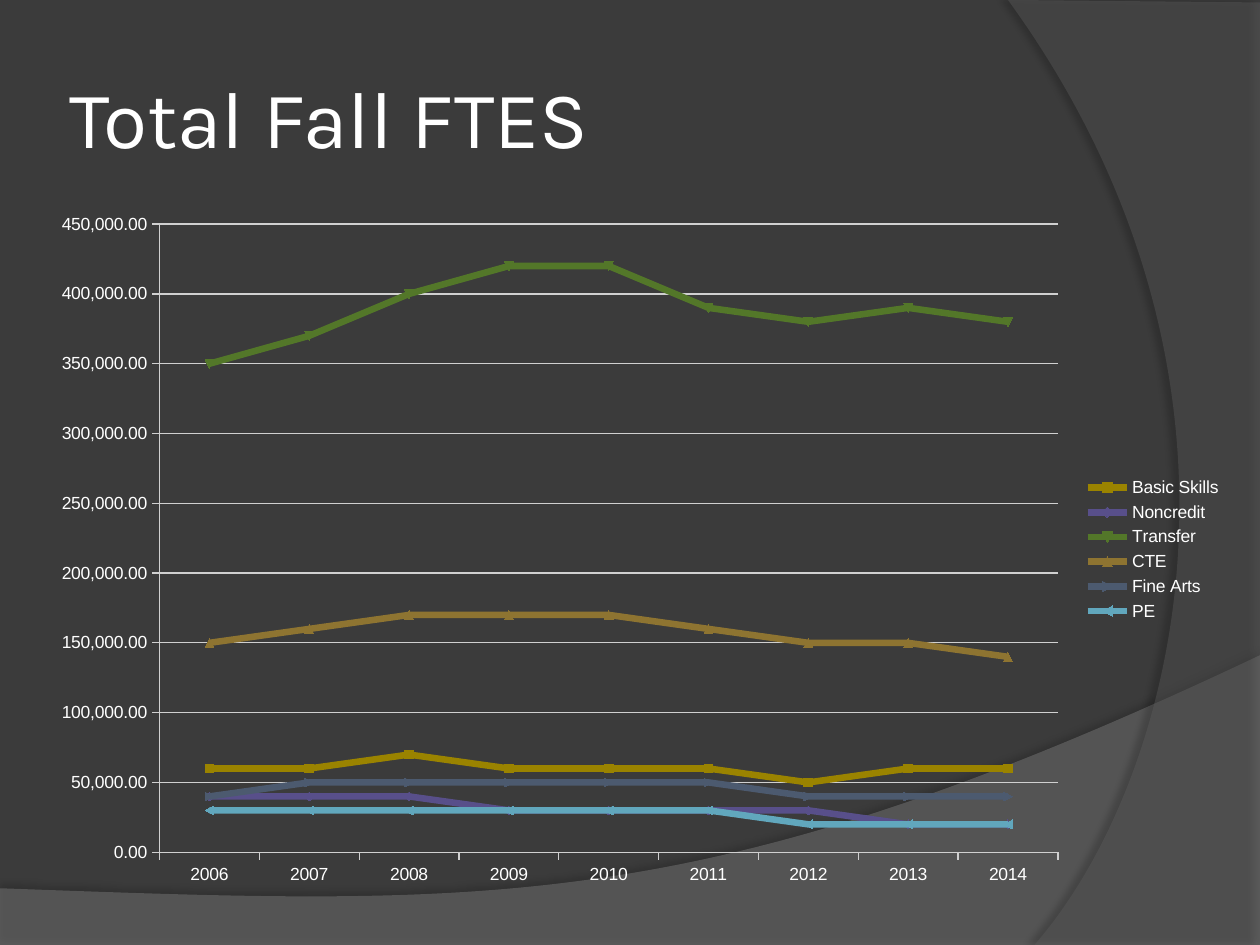
from dataclasses import dataclass
from lxml.etree import SubElement
from pptx import Presentation
from pptx.chart.data import CategoryChartData
from pptx.dml.color import RGBColor
from pptx.enum.chart import XL_CHART_TYPE, XL_LEGEND_POSITION, XL_TICK_MARK
from pptx.enum.text import MSO_ANCHOR
from pptx.oxml.ns import qn
from pptx.util import Emu, Inches, Pt

WIDE, HIGH = Inches(10), Inches(7.5)
UNIT = 100
Point = tuple[float, float]


@dataclass(frozen=True)
class Theme:
    back: str = "3B3B3B"
    text: str = "FFFFFF"
    grid: str = "D0D0D0"
    shade: str = "000000"
    head: str = "Karla"
    body: str = "Arial"
    title: int = 46
    label: int = 10
    rule: float = 0.75
    trend: float = 3.75
    mark: int = 5


@dataclass(frozen=True)
class Box:
    left: float
    top: float
    width: float
    height: float

    def place(self) -> tuple[Emu, ...]:
        sizes = (WIDE, HIGH, WIDE, HIGH)
        parts = (self.left, self.top, self.width, self.height)
        return tuple(Emu(round(s * p)) for s, p in zip(sizes, parts))


@dataclass(frozen=True)
class Wave:
    color: str
    alpha: int
    ends: list[Point]
    bend: int
    pulls: tuple[Point, Point]
    shadow: tuple[int, float, float, int]


@dataclass(frozen=True)
class Trend:
    name: str
    color: str
    lum: int
    sat: int
    vals: list[int]


LOOK = Theme()
WAVES = [
    Wave("7F7F7F", 45, [(0, 7.05), (0, 7.51), (10, 7.51), (10, 5.2), (0, 7.05)],
         4, ((5.59, 7.29), (3.91, 7.19)), (35, 4, 3.5, 270)),
    Wave("5E5E5E", 40, [(10, 0.02), (10, 7.5), (8.21, 7.5), (8, 0), (10, 0.02)],
         3, ((9.35, 6.19), (10.18, 3)), (45, 4, 4, 180)),
]
YEARS = [str(year) for year in range(2006, 2015)]
STEP = 10000
TRENDS = [
    Trend("Basic Skills", "CCAF0A", 72, 150, [6, 6, 7, 6, 6, 6, 5, 6, 6]),
    Trend("Noncredit", "8D89A4", 72, 210, [4, 4, 4, 3, 3, 3, 3, 2, 2]),
    Trend("Transfer", "748560", 70, 300, [35, 37, 40, 42, 42, 39, 38, 39, 38]),
    Trend("CTE", "9E9273", 70, 270, [15, 16, 17, 17, 17, 16, 15, 15, 14]),
    Trend("Fine Arts", "7E848D", 70, 300, [4, 5, 5, 5, 5, 5, 4, 4, 4]),
    Trend("PE", "6EA0B0", 100, 140, [3, 3, 3, 3, 3, 3, 2, 2, 2]),
]


def dress(item, **form) -> None:
    for key, value in form.items():
        setattr(item, key, value)


def paint(fill, color: str, **mods: int) -> None:
    fill.solid()
    fill.fore_color.rgb = RGBColor.from_string(color)
    node = next(fill._xPr.iter(qn("a:srgbClr")))
    for key, value in mods.items():
        SubElement(node, qn(f"a:{key}"), val=str(value * 1000))


def style(font, name: str, size: int) -> None:
    dress(font, name=name, size=Pt(size), bold=False)
    paint(font.fill, LOOK.text)


def arch(shape, wave: Wave) -> None:
    left, top = (min(axis) for axis in zip(*wave.ends))
    track = next(shape._element.iter(qn("a:path")))
    edge = track[wave.bend]
    edge.tag = qn("a:cubicBezTo")
    for spot, (x, y) in enumerate(wave.pulls):
        node = SubElement(edge, qn("a:pt"), x=str(round((x - left) * UNIT)),
                          y=str(round((y - top) * UNIT)))
        edge.insert(spot, node)


def draw_wave(slide, wave: Wave) -> None:
    first, *rest = [(x * UNIT, y * UNIT) for x, y in wave.ends]
    pen = slide.shapes.build_freeform(*first, scale=Inches(1) / UNIT)
    pen.add_line_segments(rest, close=True)
    shape = pen.convert_to_shape()
    arch(shape, wave)
    paint(shape.fill, wave.color, alpha=wave.alpha)
    shape.line.fill.background()
    shape.shadow.inherit = False
    alpha, blur, dist, angle = wave.shadow
    glow = SubElement(shape._element.spPr.find(qn("a:effectLst")), qn("a:outerShdw"),
                      blurRad=str(Pt(blur)), dist=str(Pt(dist)),
                      dir=str(angle * 60000), algn="ctr", rotWithShape="0")
    tone = SubElement(glow, qn("a:srgbClr"), val=LOOK.shade)
    SubElement(tone, qn("a:alpha"), val=str(alpha * 1000))


def draw_title(slide, box: Box, text: str) -> None:
    frame = slide.shapes.add_textbox(*box.place()).text_frame
    dress(frame, word_wrap=True, vertical_anchor=MSO_ANCHOR.MIDDLE)
    dress(frame, **{f"margin_{side}": Inches(0.05)
                    for side in ("left", "top", "right", "bottom")})
    run = frame.paragraphs[0].add_run()
    run.text = text
    style(run.font, LOOK.head, LOOK.title)


def draw_chart(slide, box: Box, trends: list[Trend]) -> None:
    data = CategoryChartData(number_format="#,##0.00")
    data.categories = YEARS
    for trend in trends:
        data.add_series(trend.name, [v * STEP for v in trend.vals])
    chart = slide.shapes.add_chart(XL_CHART_TYPE.LINE_MARKERS, *box.place(), data).chart
    dress(chart, has_title=False, has_legend=True)
    style(chart.font, LOOK.body, LOOK.label)
    dress(chart.legend, position=XL_LEGEND_POSITION.RIGHT, include_in_layout=False)
    plot = chart.plots[0]
    plot.vary_by_categories = False
    rows, cols = chart.value_axis, chart.category_axis
    dress(rows, minimum_scale=0, maximum_scale=45 * STEP, major_unit=5 * STEP,
          has_major_gridlines=True)
    dress(rows.tick_labels, number_format="#,##0.00", number_format_is_linked=False)
    for axis in (rows, cols):
        dress(axis, major_tick_mark=XL_TICK_MARK.OUTSIDE,
              minor_tick_mark=XL_TICK_MARK.NONE)
    for part in (rows, cols, rows.major_gridlines):
        part.format.line.width = Pt(LOOK.rule)
        paint(part.format.line.fill, LOOK.grid)
    for line, trend in zip(plot.series, trends):
        mods = {"satMod": trend.sat, "lumMod": trend.lum}
        line.smooth = False
        line.format.line.width = Pt(LOOK.trend)
        line.marker.size = LOOK.mark
        paint(line.format.line.fill, trend.color, **mods)
        paint(line.marker.format.fill, trend.color, **mods)
        line.marker.format.line.fill.background()


def main() -> None:
    deck = Presentation()
    dress(deck, slide_width=WIDE, slide_height=HIGH)
    slide = deck.slides.add_slide(deck.slide_layouts[6])
    paint(slide.background.fill, LOOK.back)
    for wave in WAVES:
        draw_wave(slide, wave)
    draw_title(slide, Box(0.05, 0.04, 0.82, 1 / 6), "Total Fall FTES")
    draw_chart(slide, Box(0.03, 1.59 / 7.5, 0.95, 5.54 / 7.5), TRENDS)
    deck.save("out.pptx")


if __name__ == "__main__":
    main()
